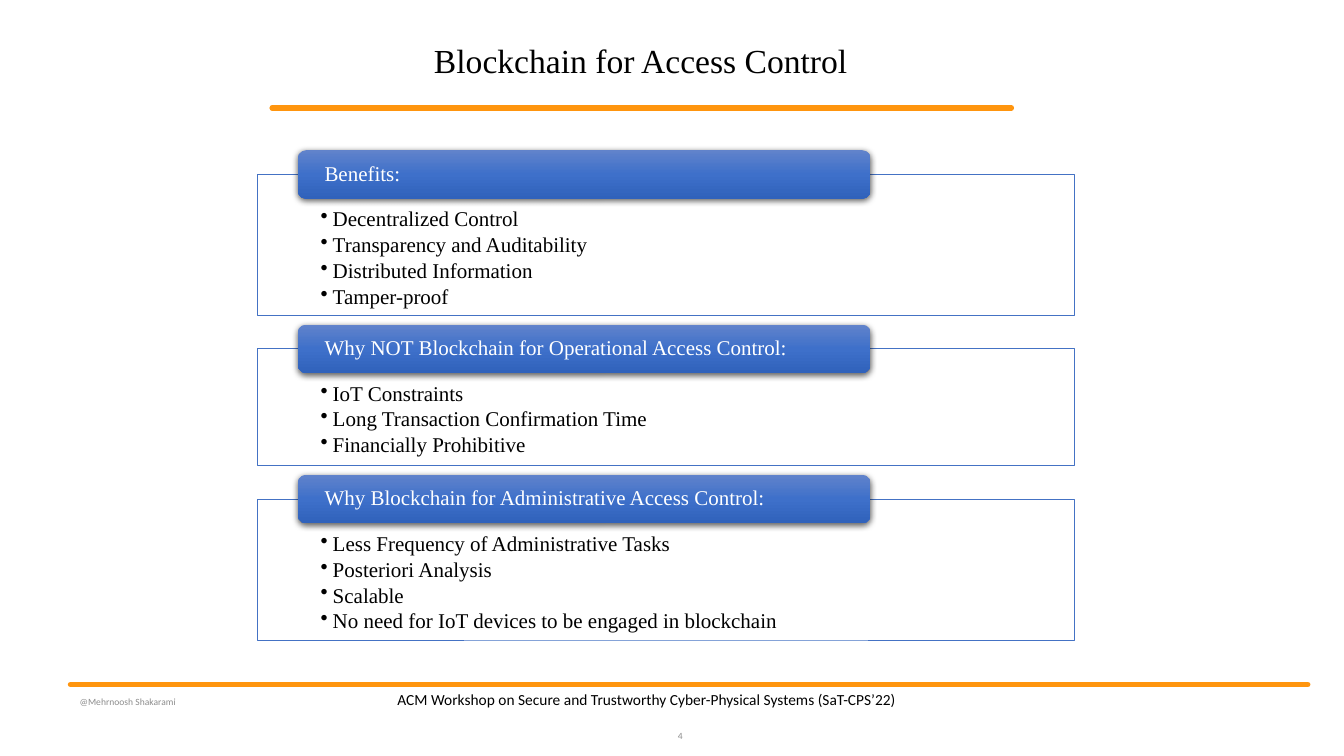
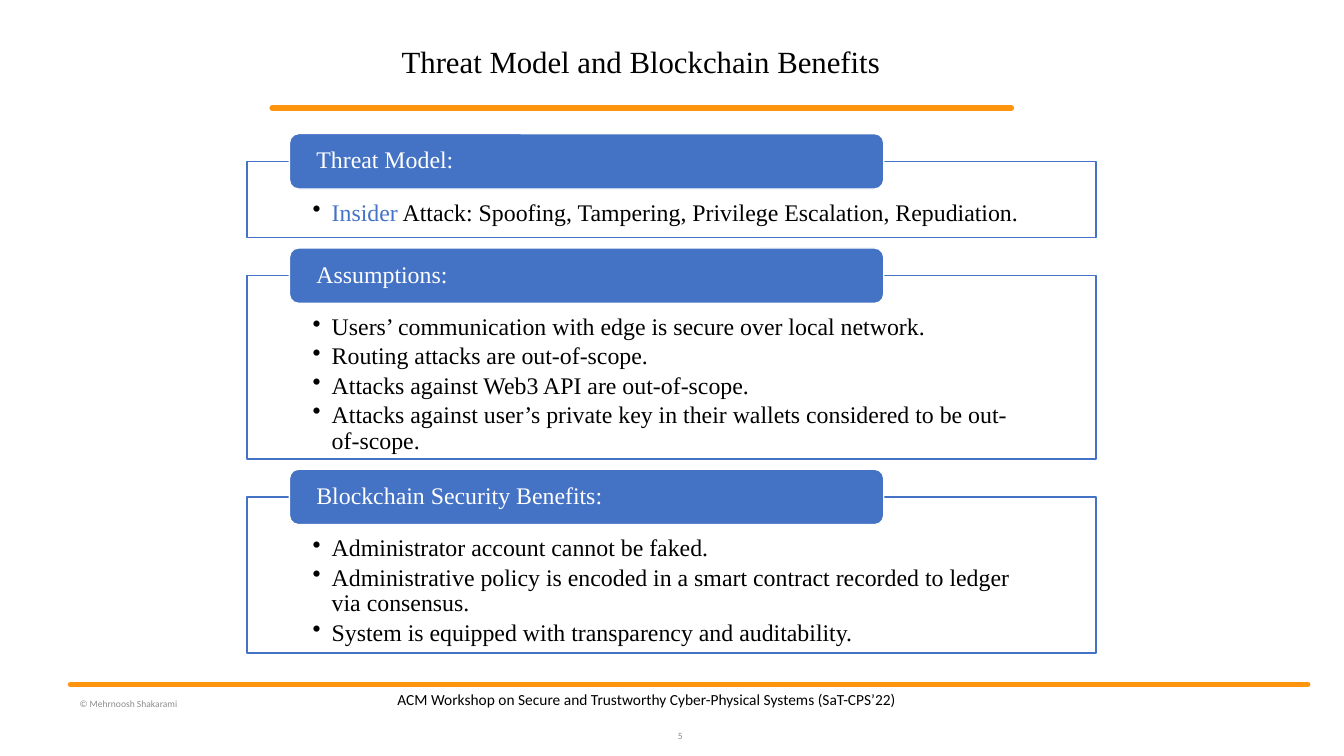
from copy import deepcopy

from lxml.etree import SubElement
from pptx import Presentation
from pptx.dml.color import RGBColor
from pptx.enum.shapes import MSO_CONNECTOR, MSO_SHAPE as SHAPE
from pptx.enum.text import MSO_ANCHOR as ANCHOR, MSO_AUTO_SIZE, PP_ALIGN as ALIGN
from pptx.oxml.ns import qn
from pptx.util import Inches, Pt

ORANGE, BLUE, GRAY = "FF950E", "4472C4", "8C8C8C"
BLACK, WHITE = "000000", "FFFFFF"
SERIF, SANS = "Times New Roman", "Calibri"
TAB_GRADIENT = [(0, "6183CB"), (0.5, "3E70CA"), (1, "3062BB")]

VENUE = "ACM Workshop on Secure and Trustworthy Cyber-Physical Systems (SaT-CPS’22)"

# A section is (heading, panel height, points); a point is a string
# or a list of (text, colour) parts.
SLIDES = [
    {
        "title": "Blockchain for Access Control", "title_size": 24,
        "number": "4", "credit": "@Mehrnoosh Shakarami", "credit_top": 6.78,
        "style": {"left": 2.55, "top": 1.73, "width": 8.11, "tab_height": 0.48,
                  "gap": 0.09, "size": 15, "inset": (0.63, 0.34, 0.63, 0.12),
                  "tab_inset": 0.24, "indent": 0.12, "border": 0.5, "raised": True},
        "sections": [
            ("Benefits:", 1.4, [
                "Decentralized Control",
                "Transparency and Auditability",
                "Distributed Information",
                "Tamper-proof"]),
            ("Why NOT Blockchain for Operational Access Control:", 1.16, [
                "IoT Constraints",
                "Long Transaction Confirmation Time",
                "Financially Prohibitive"]),
            ("Why Blockchain for Administrative Access Control:", 1.4, [
                "Less Frequency of Administrative Tasks",
                "Posteriori Analysis",
                "Scalable",
                "No need for IoT devices to be engaged in blockchain"]),
        ],
    },
    {
        "title": "Threat Model and Blockchain Benefits", "title_size": 22,
        "number": "5", "credit": "© Mehrnoosh Shakarami", "credit_top": 6.8,
        "style": {"left": 2.45, "top": 1.6, "width": 8.42, "tab_height": 0.55,
                  "gap": 0.1, "size": 17, "inset": (0.65, 0.39, 0.65, 0.13),
                  "tab_inset": 0.24, "indent": 0.19, "border": 1, "raised": False},
        "sections": [
            ("Threat Model:", 0.76, [
                [("Insider", BLUE),
                 (" Attack: Spoofing, Tampering, Privilege Escalation, Repudiation.",
                  BLACK)]]),
            ("Assumptions:", 1.82, [
                "Users’ communication with edge is secure over local network.",
                "Routing attacks are out-of-scope.",
                "Attacks against Web3 API are out-of-scope.",
                "Attacks against user’s private key in their wallets considered "
                "to be out-of-scope."]),
            ("Blockchain Security Benefits:", 1.55, [
                "Administrator account cannot be faked.",
                "Administrative policy is encoded in a smart contract recorded "
                "to ledger via consensus.",
                "System is equipped with transparency and auditability."]),
        ],
    },
]


def rgb(color):
    return RGBColor.from_string(color)


def box(*lengths):
    return [Inches(length) for length in lengths]


def add_bullet(paragraph, indent):
    props = paragraph._p.get_or_add_pPr()
    props.set("marL", str(Inches(indent)))
    props.set("indent", str(-Inches(indent)))
    SubElement(SubElement(props, qn("a:buClr")), qn("a:srgbClr"), val=BLACK)
    SubElement(props, qn("a:buChar"), char="•")


def write(shape, paragraphs, *, size, font=SERIF, color=BLACK, align=ALIGN.LEFT,
          anchor=ANCHOR.TOP, inset=(0.1, 0.05, 0.1, 0.05), spacing=None,
          after=0, indent=None):
    """Fill a shape with paragraphs; an indent turns them into bullets."""
    frame = shape.text_frame
    frame.word_wrap = True
    frame.auto_size = MSO_AUTO_SIZE.NONE
    frame.vertical_anchor = anchor
    (frame.margin_left, frame.margin_top,
     frame.margin_right, frame.margin_bottom) = box(*inset)
    for index, parts in enumerate(paragraphs):
        paragraph = frame.add_paragraph() if index else frame.paragraphs[0]
        if indent:
            add_bullet(paragraph, indent)
        paragraph.alignment = align
        paragraph.line_spacing = spacing
        paragraph.space_before = Pt(0)
        paragraph.space_after = Pt(after)
        for text, part_color in [(parts, color)] if isinstance(parts, str) else parts:
            run = paragraph.add_run()
            run.text = text
            run.font.name = font
            run.font.size = Pt(size)
            run.font.color.rgb = rgb(part_color)


def add_label(slide, place, text, **format):
    write(slide.shapes.add_textbox(*box(*place)), [text], font=SANS, **format)


def add_block(slide, kind, place, fill, border, width):
    block = slide.shapes.add_shape(kind, *box(*place))
    block.shadow.inherit = False
    block.fill.solid()
    block.fill.fore_color.rgb = rgb(fill)
    block.line.color.rgb = rgb(border)
    block.line.width = Pt(width)
    return block


def raise_tab(tab):
    """Give a tab its vertical gradient and soft shadow, without an outline."""
    tab.line.fill.background()
    tab.fill.gradient()
    tab.fill.gradient_angle = 270
    stops = tab.element.spPr.find(".//" + qn("a:gsLst"))
    stops.append(deepcopy(stops[0]))
    for stop, (position, color) in zip(tab.fill.gradient_stops, TAB_GRADIENT):
        stop.position = position
        stop.color.rgb = rgb(color)
    shadow = SubElement(tab.element.spPr.find(qn("a:effectLst")), qn("a:outerShdw"),
                        blurRad=str(Pt(4.5)), dist=str(Pt(1.5)), dir="5400000",
                        algn="ctr", rotWithShape="0")
    shade = SubElement(shadow, qn("a:srgbClr"), val=BLACK)
    SubElement(shade, qn("a:alpha"), val="63000")


def add_sections(slide, sections, *, left, top, width, tab_height, gap, size,
                 inset, tab_inset, indent, border, raised):
    """Stack framed lists, each with a heading tab across its top edge."""
    for heading, height, points in sections:
        panel = add_block(slide, SHAPE.RECTANGLE, (left, top, width, height),
                          WHITE, BLUE, border)
        write(panel, points, size=size, inset=inset, spacing=0.9,
              after=0.15 * size, indent=indent)
        tab_place = (left + 0.05 * width, top - tab_height / 2,
                     0.7 * width, tab_height)
        tab = add_block(slide, SHAPE.ROUNDED_RECTANGLE, tab_place, BLUE, WHITE, border)
        if raised:
            raise_tab(tab)
        write(tab, [heading], size=size, color=WHITE, anchor=ANCHOR.MIDDLE,
              inset=(tab_inset, 0, tab_inset, 0), spacing=0.9)
        top += height + gap + tab_height / 2


def add_rule(slide, left, right, y):
    """Draw an orange rule and hand it to the layout that all slides share."""
    rule = slide.shapes.add_connector(MSO_CONNECTOR.STRAIGHT, *box(left, y, right, y))
    rule.line.color.rgb = rgb(ORANGE)
    rule.line.width = Pt(4)
    rule.line._get_or_add_ln().set("cap", "rnd")
    SubElement(rule.element.spPr, qn("a:effectLst"))
    slide.slide_layout.shapes.element.append(rule.element)


def add_slide(prs, layout, content):
    slide = prs.slides.add_slide(layout)
    title = slide.shapes.title
    title.left, title.top, title.width, title.height = box(3.66, 0.34, 5.39, 0.51)
    write(title, [content["title"]], size=content["title_size"], align=ALIGN.CENTER,
          anchor=ANCHOR.BOTTOM, spacing=0.9)
    add_sections(slide, content["sections"], **content["style"])
    small = {"size": 6.8, "color": GRAY, "anchor": ANCHOR.MIDDLE}
    add_label(slide, (6.47, 7.1, 0.4, 0.4), content["number"],
              align=ALIGN.RIGHT, **small)
    add_label(slide, (0.69, content["credit_top"], 2.75, 0.36),
              content["credit"], **small)
    add_label(slide, (3.66, 6.8, 5.51, 0.4), VENUE, size=11, align=ALIGN.CENTER)
    return slide


def main():
    prs = Presentation()
    prs.slide_width, prs.slide_height = box(13.33, 7.5)
    title_only = prs.slide_layouts[5]
    slides = [add_slide(prs, title_only, content) for content in SLIDES]
    add_rule(slides[0], 2.7, 10.03, 1.07)
    add_rule(slides[0], 0.7, 12.97, 6.79)
    prs.save("out.pptx")


if __name__ == "__main__":
    main()
